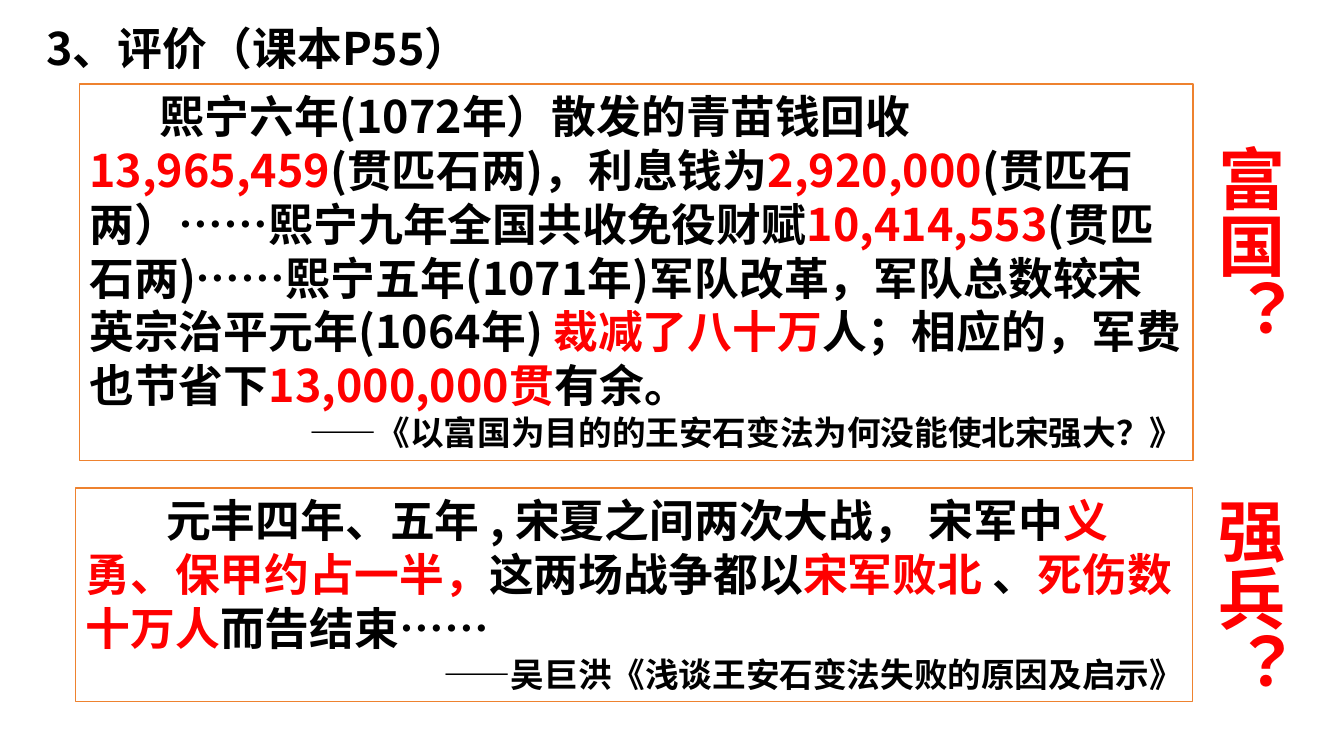
import pptx
import pptx.util
import pptx.dml.color
import pptx.enum.shapes
import pptx.enum.text
import lxml.etree
from dataclasses import dataclass

Pt = pptx.util.Pt
RGB = pptx.dml.color.RGBColor.from_string
ALIGN = pptx.enum.text.PP_ALIGN
ANCHOR = pptx.enum.text.MSO_ANCHOR
AUTO = pptx.enum.text.MSO_AUTO_SIZE
A = "http://schemas.openxmlformats.org/drawingml/2006/main"


@dataclass(frozen=True)
class Theme:
    font: str = "Noto Sans CJK SC"
    text: str = "000000"
    accent: str = "FF0000"
    paper: str = "FFFFFF"
    border: str = "EE822F"
    body: int = 32
    source: int = 24
    label: int = 48


class Deck:
    def __init__(self, theme):
        self.theme = theme
        self.prs = pptx.Presentation()
        self.prs.slide_width, self.prs.slide_height = Pt(960), Pt(540)
        self.slide = self.prs.slides.add_slide(self.prs.slide_layouts[5])

    def style(self, p, size, color):
        for r in p.runs:
            r.font.size, r.font.bold, r.font.name = Pt(size), True, self.theme.font
            r.font.color.rgb = RGB(color)
            ea = lxml.etree.SubElement(r._r.get_or_add_rPr(), f"{{{A}}}ea")
            ea.set("typeface", self.theme.font)

    def frame(self, s, wrap=True):
        tf = s.text_frame
        tf.word_wrap, tf.auto_size = wrap, AUTO.SHAPE_TO_FIT_TEXT
        tf.vertical_anchor = ANCHOR.TOP
        return tf

    def title(self, text, x, y, w, h):
        s = self.slide.shapes.title
        s.left, s.top, s.width, s.height = Pt(x), Pt(y), Pt(w), Pt(h)
        tf = self.frame(s)
        tf.text = text
        p = tf.paragraphs[0]
        p.alignment, p.line_spacing = ALIGN.LEFT, 1.3
        self.style(p, self.theme.body, self.theme.text)

    def quote(self, parts, source, x, y, w, h, indent):
        """Bordered quotation; every second part is highlighted."""
        t = self.theme
        s = self.slide.shapes.add_shape(
            pptx.enum.shapes.MSO_SHAPE.RECTANGLE, Pt(x), Pt(y), Pt(w), Pt(h))
        s.shadow.inherit = False
        s.fill.solid()
        s.fill.fore_color.rgb = RGB(t.paper)
        s.line.color.rgb = RGB(t.border)
        s.line.width = Pt(1)
        tf = self.frame(s)
        p = tf.paragraphs[0]
        p.alignment = ALIGN.LEFT
        pPr = p._p.get_or_add_pPr()
        pPr.set("indent", str(Pt(indent)))
        pPr.set("hangingPunct", "0")  # keep punctuation inside the border
        for part in parts:
            p.add_run().text = part
        self.style(p, t.body, t.text)
        for r in p.runs[1::2]:
            r.font.color.rgb = RGB(t.accent)
        p = tf.add_paragraph()
        p.text, p.alignment = source, ALIGN.RIGHT
        self.style(p, t.source, t.text)

    def vertical_label(self, text, x, y, w, h):
        s = self.slide.shapes.add_textbox(Pt(x), Pt(y), Pt(w), Pt(h))
        tf = self.frame(s, wrap=False)
        s.element.txBody.bodyPr.set("vert", "eaVert")
        tf.text = text
        self.style(tf.paragraphs[0], self.theme.label, self.theme.accent)


def main():
    deck = Deck(Theme())

    # Heading
    deck.title("3、评价（课本P55）", 26, 0, 415.5, 57.6)

    # Quotations
    deck.quote(
        ["熙宁六年(1072年）散发的青苗钱回收", "13,965,459",
         "(贯匹石两)，利息钱为", "2,920,000",
         "(贯匹石两）……熙宁九年全国共收免役财赋", "10,414,553",
         "(贯匹石两)……熙宁五年(1071年)军队改革，军队总数较宋英宗治平元年(1064年) ",
         "裁减了八十万", "人；相应的，军费也节省下", "13,000,000贯", "有余。"],
        "——《以富国为目的的王安石变法为何没能使北宋强大？》",
        56.7, 60, 795.5, 269, indent=50.4)
    deck.quote(
        ["元丰四年、五年 , 宋夏之间两次大战， 宋军中", "义勇、保甲约占一半，",
         "这两场战争都以", "宋军败北 ", "、", "死伤数十万人", "而告结束……"],
        "——吴巨洪《浅谈王安石变法失败的原因及启示》",
        54, 348.5, 798, 152.6, indent=57.6)

    # Questions beside the quotations
    for text, y in (("富国？", 96.5), ("强兵？", 348.5)):
        deck.vertical_label(text, 852, y, 72.7, 152.6)

    deck.prs.save("out.pptx")


if __name__ == "__main__":
    main()
